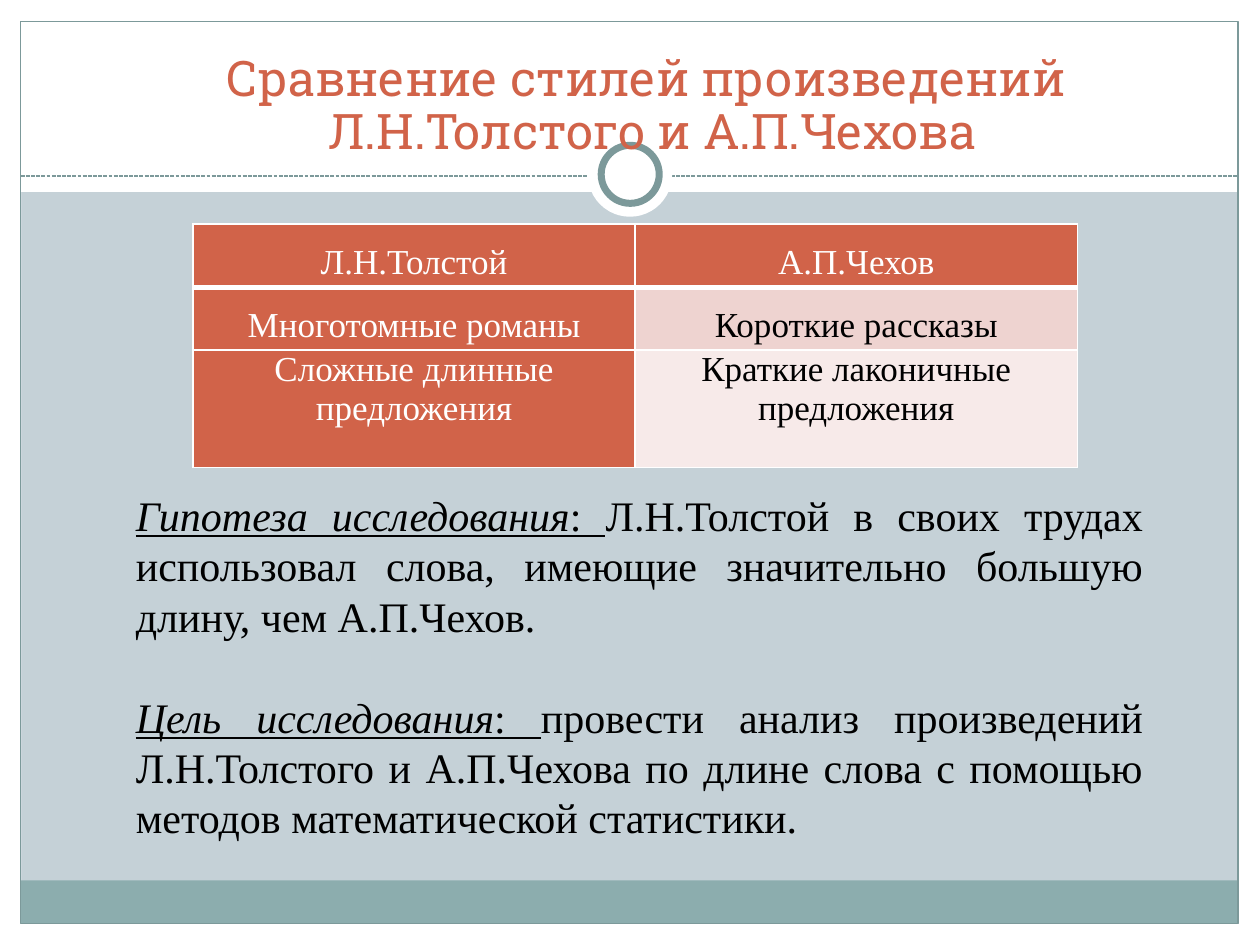
import pptx
import pptx.util
import pptx.dml.color
import pptx.enum.dml
import pptx.enum.shapes
import pptx.enum.text
import pptx.oxml
import pptx.oxml.ns
import lxml.etree

Cm = pptx.util.Cm
Pt = pptx.util.Pt
SHAPE = pptx.enum.shapes.MSO_SHAPE
ALIGN = pptx.enum.text.PP_ALIGN
BODY_FONT = "Times New Roman"

COLORS = {
    "background": "C5D1D7",
    "white": "FFFFFF",
    "black": "000000",
    "band": "8CADAE",
    "frame": "7C999A",
    "accent": "D16349",
    "pink": "EED3D0",
    "pale": "F7EAE9",
}


def rgb(name):
    return pptx.dml.color.RGBColor.from_string(COLORS[name])


def add_decoration(kind, box, fill=None, line=None, width=0.75):
    shape = slide.shapes.add_shape(kind, *[Cm(length) for length in box])
    shape.shadow.inherit = False
    if fill:
        shape.fill.solid()
        shape.fill.fore_color.rgb = rgb(fill)
    else:
        shape.fill.background()
    if line:
        shape.line.color.rgb = rgb(line)
        shape.line.width = Pt(width)
    else:
        shape.line.fill.background()


presentation = pptx.Presentation()
presentation.slide_width = Cm(25.4)
presentation.slide_height = Cm(19.05)
slide = presentation.slides.add_slide(presentation.slide_layouts[5])
slide.background.fill.solid()
slide.background.fill.fore_color.rgb = rgb("background")

# White margins, bottom band and frame
for box in [(0, 18.62, 25.4, 0.43), (0, 0, 25.4, 3.87),
            (0, 0, 0.43, 19.05), (24.97, 0, 0.43, 19.05)]:
    add_decoration(SHAPE.RECTANGLE, box, fill="white")
add_decoration(SHAPE.RECTANGLE, (0.42, 17.75, 24.54, 0.87), fill="band")
add_decoration(SHAPE.RECTANGLE, (0.42, 0.43, 24.54, 18.19), line="frame")

# Dashed divider with a ring in the middle
divider = slide.shapes.add_connector(
    pptx.enum.shapes.MSO_CONNECTOR.STRAIGHT, Cm(0.42), Cm(3.55), Cm(24.96), Cm(3.55))
divider.line.color.rgb = rgb("frame")
divider.line.width = Pt(0.75)
divider.line.dash_style = pptx.enum.dml.MSO_LINE.SQUARE_DOT
lxml.etree.SubElement(divider.element.spPr, pptx.oxml.ns.qn("a:effectLst"))
add_decoration(SHAPE.OVAL, (11.85, 2.67, 1.7, 1.7), fill="white")
add_decoration(SHAPE.OVAL, (12.12, 2.93, 1.17, 1.17), fill="white", line="frame", width=4)

# Title, brought in front of the ring
title = slide.shapes.title
title.element.getparent().append(title.element)
title.left, title.top, title.width, title.height = Cm(1.3), Cm(1.12), Cm(23.7), Cm(2.11)
title.text_frame.text = "Сравнение стилей произведений \vЛ.Н.Толстого и А.П.Чехова"
title.text_frame.auto_size = pptx.enum.text.MSO_AUTO_SIZE.NONE
title.text_frame.vertical_anchor = pptx.enum.text.MSO_ANCHOR.BOTTOM
title.text_frame.margin_bottom = 0
paragraph = title.text_frame.paragraphs[0]
paragraph.alignment = ALIGN.CENTER
paragraph.line_spacing = 0.9
paragraph.font.name = "Roboto Slab"
paragraph.font.size = Pt(28)
paragraph.font.color.rgb = rgb("accent")

# Comparison table: text, fill and line spacing by row
table_rows = [
    (1.27, 1.5, "accent", ["Л.Н.Толстой", "А.П.Чехов"]),
    (1.27, 1.5, "pink", ["Многотомные романы", "Короткие рассказы"]),
    (2.36, 1.0, "pale", ["Сложные длинные предложения", "Краткие лаконичные предложения"]),
]
table = slide.shapes.add_table(3, 2, Cm(3.89), Cm(4.52), Cm(17.83), Cm(4.9)).table
for row_index, (height, spacing, right_fill, texts) in enumerate(table_rows):
    table.rows[row_index].height = Cm(height)
    for column_index, text in enumerate(texts):
        cell = table.cell(row_index, column_index)
        cell.margin_left = cell.margin_right = Cm(0.18)
        cell.margin_top = cell.margin_bottom = 0
        cell.text = text
        fill = "accent" if column_index == 0 else right_fill
        paragraph = cell.text_frame.paragraphs[0]
        paragraph.alignment = ALIGN.CENTER
        paragraph.line_spacing = spacing
        paragraph.font.name = BODY_FONT
        paragraph.font.size = Pt(20)
        paragraph.font.bold = False
        paragraph.font.color.rgb = rgb("white" if fill == "accent" else "black")

        # White borders, thicker under the header
        properties = cell._tc.get_or_add_tcPr()
        for side in "LRTB":
            thick = (row_index, side) in [(0, "B"), (1, "T")]
            properties.append(pptx.oxml.parse_xml(
                f'<a:ln{side} {pptx.oxml.ns.nsdecls("a")} w="{Pt(3 if thick else 1)}">'
                f'<a:solidFill><a:srgbClr val="{COLORS["white"]}"/></a:solidFill></a:ln{side}>'))
        cell.fill.solid()
        cell.fill.fore_color.rgb = rgb(fill)

# Hypothesis and aim: (text, italic, underline) runs
statements = [
    [("Гипотеза", True, True), (" ", False, True), ("исследования", True, True),
     (": ", False, True),
     ("Л.Н.Толстой в своих трудах использовал слова, имеющие значительно "
      "большую длину, чем А.П.Чехов.", False, False)],
    [("Цель исследования", True, True), (": ", False, True),
     ("провести анализ произведений Л.Н.Толстого и А.П.Чехова по длине слова "
      "с помощью методов математической статистики.", False, False)],
]
text_frame = slide.shapes.add_textbox(Cm(2.49), Cm(8.74), Cm(20.8), Cm(8.46)).text_frame
text_frame.word_wrap = True
text_frame.margin_top = Cm(1.13)
for index, runs in enumerate(statements):
    paragraph = text_frame.add_paragraph() if index else text_frame.paragraphs[0]
    paragraph.alignment = ALIGN.JUSTIFY
    paragraph.line_spacing = Pt(28.8)
    paragraph.space_before = Pt(28.8 if index else 0)
    paragraph.font.name = BODY_FONT
    paragraph.font.size = Pt(24)
    paragraph.font.color.rgb = rgb("black")
    for text, italic, underline in runs:
        run = paragraph.add_run()
        run.text = text
        run.font.italic = italic
        run.font.underline = underline

presentation.save("out.pptx")
